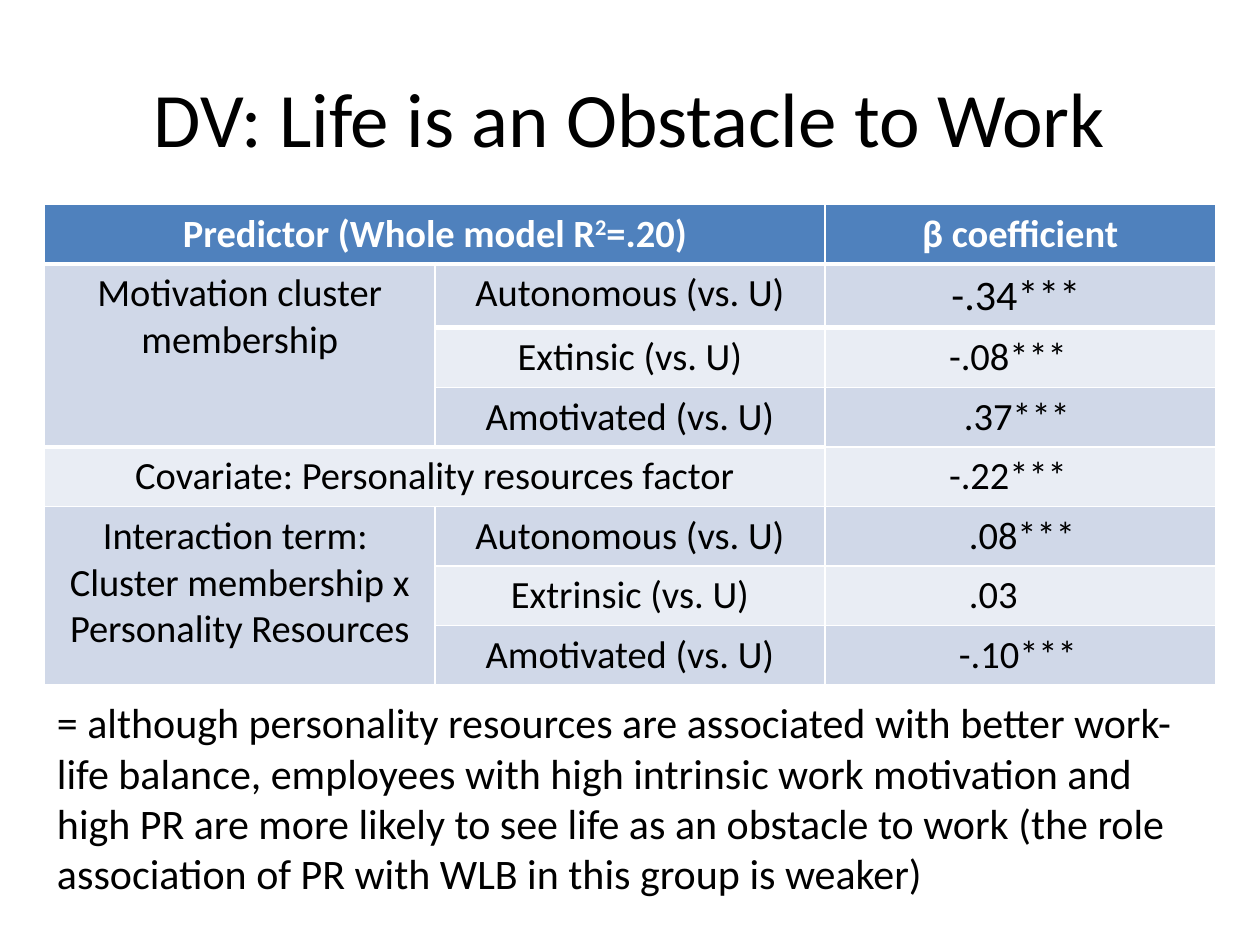
from lxml import etree
from pptx import Presentation
from pptx.dml.color import RGBColor
from pptx.enum.text import MSO_ANCHOR, PP_ALIGN
from pptx.oxml.ns import qn
from pptx.util import Cm, Pt

CENTER, LEFT = PP_ALIGN.CENTER, PP_ALIGN.LEFT
MIDDLE = MSO_ANCHOR.MIDDLE
COLORS = {"text": "000000", "head": "4F81BD", "light": "FFFFFF",
          "odd": "D0D8E8", "even": "E9EDF4"}

HEAD = ["Predictor (Whole model R^2^=.20)", "", "β coefficient"]
ROWS = [
    ["Motivation cluster membership", "Autonomous (vs. U)", "-.34***"],
    ["", "Extinsic (vs. U)", "-.08***"],
    ["", "Amotivated (vs. U)", ".37***"],
    ["Covariate: Personality resources factor", "", "-.22***"],
    ["Interaction term: \vCluster membership x\vPersonality Resources",
     "Autonomous (vs. U)", ".08***"],
    ["", "Extrinsic (vs. U)", ".03"],
    ["", "Amotivated (vs. U)", "-.10***"],
]
SPANS = [((0, 0), (0, 1)), ((1, 0), (3, 0)), ((4, 0), (4, 1)), ((5, 0), (7, 0))]
INSETS = [2.55, 2.5, 2.8, 2.5, 2.9, 2.9, 2.7]
NOTE = ("= although personality resources are associated with better "
        "work-life balance, employees with high intrinsic work motivation "
        "and high PR are more likely to see life as an obstacle to work "
        "(the role association of PR with WLB in this group is weaker)")


class Deck:
    def __init__(self):
        self.font = "Calibri"
        self.show = Presentation()
        self.show.slide_width, self.show.slide_height = Cm(25.4), Cm(19.05)
        self.slide = self.show.slides.add_slide(self.show.slide_layouts[5])

    def style(self, para, size, color="text", align=LEFT, bold=False):
        para.alignment = align
        font = para.font
        font.name, font.size, font.bold = self.font, Pt(size), bold
        font.color.rgb = RGBColor.from_string(COLORS[color])

    def title(self, text, x, y, w, h):
        box = self.slide.shapes.title
        box.left, box.top, box.width, box.height = Cm(x), Cm(y), Cm(w), Cm(h)
        box.text_frame.text = text
        box.text_frame.vertical_anchor = MIDDLE
        self.style(box.text_frame.paragraphs[0], 44, align=CENTER)

    def note(self, text, x, y, w, h):
        frame = self.slide.shapes.add_textbox(
            Cm(x), Cm(y), Cm(w), Cm(h)).text_frame
        frame.word_wrap = True
        frame.text = text
        self.style(frame.paragraphs[0], 24)

    def edge(self, cell, side, width):
        line = etree.Element(qn(f"a:{side}"), w=str(Pt(width)))
        fill = etree.SubElement(line, qn("a:solidFill"))
        etree.SubElement(fill, qn("a:srgbClr"), val=COLORS["light"])
        cell._tc.get_or_add_tcPr().insert(0, line)

    def cell(self, cell, text, fill, size=22, **look):
        cell.fill.solid()
        cell.fill.fore_color.rgb = RGBColor.from_string(COLORS[fill])
        para = cell.text_frame.paragraphs[0]
        for i, part in enumerate(text.split("^")):
            for j, line in enumerate(part.split("\v")):
                if j:
                    para.add_line_break()
                if line:
                    run = para.add_run()
                    run.text = line
                    if i % 2:
                        run._r.get_or_add_rPr().set("baseline", "30000")
        self.style(para, size, **look)

    def table(self, x, y, w, high):
        count = len(ROWS) + 1
        grid = self.slide.shapes.add_table(
            count, len(HEAD), Cm(x), Cm(y), Cm(w), Cm(high * count)).table
        for c, text in enumerate(HEAD):
            self.cell(grid.cell(0, c), text, "head",
                      color="light", align=CENTER, bold=True)
            self.edge(grid.cell(0, c), "lnB", 3)
            self.edge(grid.cell(1, c), "lnT", 3)
        for r, (row, inset) in enumerate(zip(ROWS, INSETS), 1):
            fill = "odd" if r % 2 else "even"
            for c, text in enumerate(row[:2]):
                self.cell(grid.cell(r, c), text, fill, align=CENTER)
            beta = grid.cell(r, 2)
            beta.margin_left = Cm(inset)
            self.cell(beta, row[2], fill, size=24 if r == 1 else 22)
        for start, end in SPANS:
            grid.cell(*start).merge(grid.cell(*end))


def main():
    deck = Deck()
    deck.title("DV: Life is an Obstacle to Work", 1.27, 0.76, 22.86, 3.18)
    deck.table(0.9, 4.12, 23.6, 1.2)
    deck.note(NOTE, 0.9, 13.92, 23.6, 4.37)
    deck.show.save("out.pptx")


if __name__ == "__main__":
    main()
